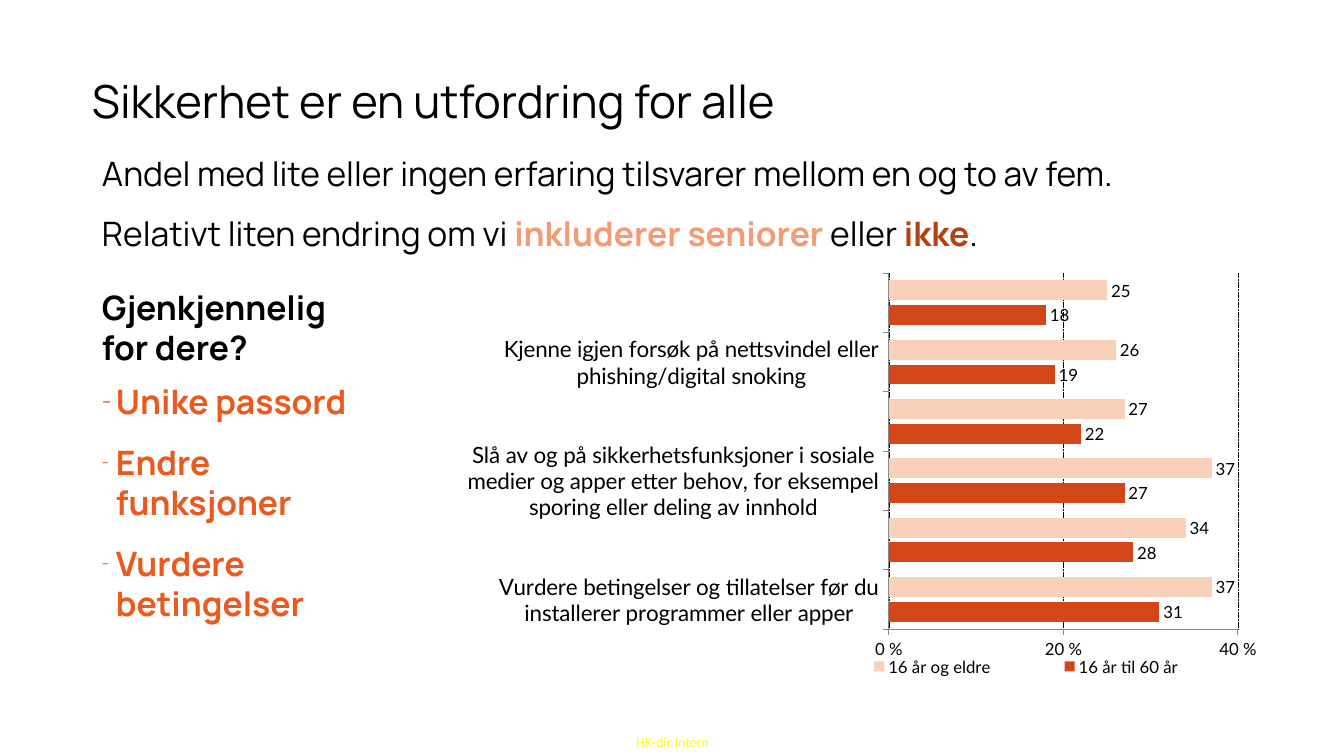
from dataclasses import dataclass

from lxml.etree import SubElement
from pptx import Presentation
from pptx.chart.data import CategoryChartData
from pptx.dml.color import RGBColor
from pptx.enum.chart import XL_CHART_TYPE, XL_LABEL_POSITION, XL_LEGEND_POSITION, XL_TICK_MARK
from pptx.enum.dml import MSO_LINE
from pptx.enum.text import MSO_ANCHOR, PP_ALIGN
from pptx.oxml import parse_xml
from pptx.oxml.ns import nsdecls, qn
from pptx.util import Emu, Pt

EMU_PER_PX = 914400 / 100.8


@dataclass(frozen=True)
class Theme:
    text_font: str = "Manrope"
    chart_font: str = "Lato"
    footer_font: str = "Calibri"
    black: str = "000000"
    axis: str = "888888"
    orange: str = "EA591D"
    peach: str = "F29B77"
    rust: str = "B44111"
    footer: str = "FFFF00"
    adults: str = "D24617"
    everyone: str = "F9D1B8"
    title_size: float = 32.5
    body_size: float = 24
    category_size: float = 16
    chart_size: float = 12
    footer_size: float = 10


THEME = Theme()

ANSWERS = [
    ("Vurdere betingelser og tillatelser før du installerer programmer eller apper", 31, 37),
    ("", 28, 34),
    ("Slå av og på sikkerhetsfunksjoner i sosiale medier og apper etter behov, "
     "for eksempel sporing eller deling av innhold", 27, 37),
    ("", 22, 27),
    ("Kjenne igjen forsøk på nettsvindel eller phishing/digital snoking", 19, 26),
    ("", 18, 25),
]


def px(length):
    return Emu(round(length * EMU_PER_PX))


def color(value):
    return RGBColor.from_string(value)


def style_font(font, size, name, value=THEME.black, bold=False):
    font.size = Pt(size)
    font.name = name
    font.color.rgb = color(value)
    font.bold = bold


def add_text_box(slide, box, anchor=MSO_ANCHOR.TOP, inset=(0, 0)):
    frame = slide.shapes.add_textbox(*map(px, box)).text_frame
    frame.word_wrap = True
    frame.vertical_anchor = anchor
    frame.margin_left = frame.margin_right = px(inset[0])
    frame.margin_top = frame.margin_bottom = px(inset[1])
    return frame


def add_run(paragraph, text, size=THEME.body_size, name=THEME.text_font,
            value=THEME.black, bold=False):
    run = paragraph.add_run()
    run.text = text
    style_font(run.font, size, name, value, bold)


def next_paragraph(frame, space_before):
    first = frame.paragraphs[0]
    paragraph = frame.add_paragraph() if first.runs else first
    paragraph.line_spacing = 1.0
    paragraph.space_before = Pt(space_before)
    return paragraph


def add_dash_item(frame, lines, space_before, dash_percent):
    paragraph = next_paragraph(frame, space_before)
    properties = paragraph._p.get_or_add_pPr()
    properties.set("marL", str(px(14)))
    properties.set("indent", str(-px(14)))
    SubElement(properties, qn("a:buSzPct"), val=str(dash_percent * 1000))
    SubElement(properties, qn("a:buFont"), typeface=THEME.text_font)
    SubElement(properties, qn("a:buChar"), char="-")
    for index, line in enumerate(lines):
        if index:
            paragraph.add_line_break()
        add_run(paragraph, line, value=THEME.orange, bold=True)


def add_title(slide):
    frame = add_text_box(slide, (92, 78, 1134, 50), MSO_ANCHOR.MIDDLE)
    paragraph = frame.paragraphs[0]
    paragraph.line_spacing = 0.95
    add_run(paragraph, "Sikkerhet er en utfordring for alle", THEME.title_size)


def add_body(slide):
    frame = add_text_box(slide, (92, 148, 1152, 485), inset=(10, 5))
    add_run(next_paragraph(frame, 0),
            "Andel med lite eller ingen erfaring tilsvarer mellom en og to av fem.")
    comparison = next_paragraph(frame, 14)
    add_run(comparison, "Relativt liten endring om vi ")
    add_run(comparison, "inkluderer seniorer ", value=THEME.peach, bold=True)
    add_run(comparison, "eller ")
    add_run(comparison, "ikke", value=THEME.rust, bold=True)
    add_run(comparison, ".")
    add_run(next_paragraph(frame, 24), "Gjenkjennelig", bold=True)
    add_run(next_paragraph(frame, 0), "for dere?", bold=True)
    add_dash_item(frame, ["Unike passord"], 9.5, 67)
    add_dash_item(frame, ["Endre", "funksjoner"], 14.5, 50)
    add_dash_item(frame, ["Vurdere", "betingelser"], 15, 50)


def add_footer(slide):
    frame = add_text_box(slide, (620, 727, 105, 29), MSO_ANCHOR.MIDDLE)
    paragraph = frame.paragraphs[0]
    paragraph.alignment = PP_ALIGN.CENTER
    add_run(paragraph, "HK-dir Intern", THEME.footer_size, THEME.footer_font, THEME.footer)


def manual_layout(left, top, width, height, inner=False):
    target = '<c:layoutTarget val="inner"/>' if inner else ""
    return parse_xml(
        f'<c:layout {nsdecls("c")}><c:manualLayout>{target}'
        '<c:xMode val="edge"/><c:yMode val="edge"/>'
        f'<c:x val="{left}"/><c:y val="{top}"/><c:w val="{width}"/><c:h val="{height}"/>'
        '</c:manualLayout></c:layout>')


def style_axis(axis, size):
    axis.major_tick_mark = XL_TICK_MARK.OUTSIDE
    axis.minor_tick_mark = XL_TICK_MARK.NONE
    axis.format.line.color.rgb = color(THEME.axis)
    axis.format.line.width = Pt(0.75)
    style_font(axis.tick_labels.font, size, THEME.chart_font)


def style_series(series, value):
    series.format.fill.solid()
    series.format.fill.fore_color.rgb = color(value)
    series.invert_if_negative = False
    labels = series.data_labels
    labels.show_value = True
    labels.position = XL_LABEL_POSITION.OUTSIDE_END
    labels.number_format = "0"
    labels.number_format_is_linked = False
    style_font(labels.font, THEME.chart_size, THEME.chart_font)


def style_value_axis(axis):
    style_axis(axis, THEME.chart_size)
    axis.minimum_scale = 0
    axis.maximum_scale = 40
    axis.major_unit = 20
    axis.tick_labels.number_format = r"General\ \%"
    axis.tick_labels.number_format_is_linked = False
    axis.has_major_gridlines = True
    gridline = axis.major_gridlines.format.line
    gridline.color.rgb = color(THEME.black)
    gridline.width = Pt(0.25)
    gridline.dash_style = MSO_LINE.SQUARE_DOT


def add_experience_chart(slide):
    categories, adults, everyone = zip(*ANSWERS)
    data = CategoryChartData()
    data.categories = categories
    data.add_series("16 år til 60 år", adults)
    data.add_series("16 år og eldre", everyone)
    chart = slide.shapes.add_chart(
        XL_CHART_TYPE.BAR_CLUSTERED, *map(px, (432, 269, 831, 414)), data).chart
    chart.has_title = False
    style_font(chart.font, THEME.chart_size, THEME.chart_font)
    plot = chart.plots[0]
    plot.gap_width = 75
    plot.overlap = -25
    plot.vary_by_categories = False
    for series, value in zip(plot.series, (THEME.adults, THEME.everyone)):
        style_series(series, value)
    style_axis(chart.category_axis, THEME.category_size)
    style_value_axis(chart.value_axis)
    area = chart._chartSpace.chart.plotArea
    for layout in area.findall(qn("c:layout")):
        area.remove(layout)
    area.insert(0, manual_layout(0.55, 0.01, 0.42, 0.86, inner=True))
    chart.has_legend = True
    legend = chart.legend
    legend.position = XL_LEGEND_POSITION.BOTTOM
    legend.include_in_layout = False
    style_font(legend.font, THEME.chart_size, THEME.chart_font)
    for layout in legend._element.findall(qn("c:layout")):
        legend._element.remove(layout)
    legend._element.find(qn("c:legendPos")).addnext(manual_layout(0.45, 0.93, 0.53, 0.06))


def main():
    presentation = Presentation()
    presentation.slide_width = px(1344)
    presentation.slide_height = px(756)
    slide = presentation.slides.add_slide(presentation.slide_layouts[6])
    add_footer(slide)
    add_title(slide)
    add_body(slide)
    add_experience_chart(slide)
    presentation.save("out.pptx")


if __name__ == "__main__":
    main()
